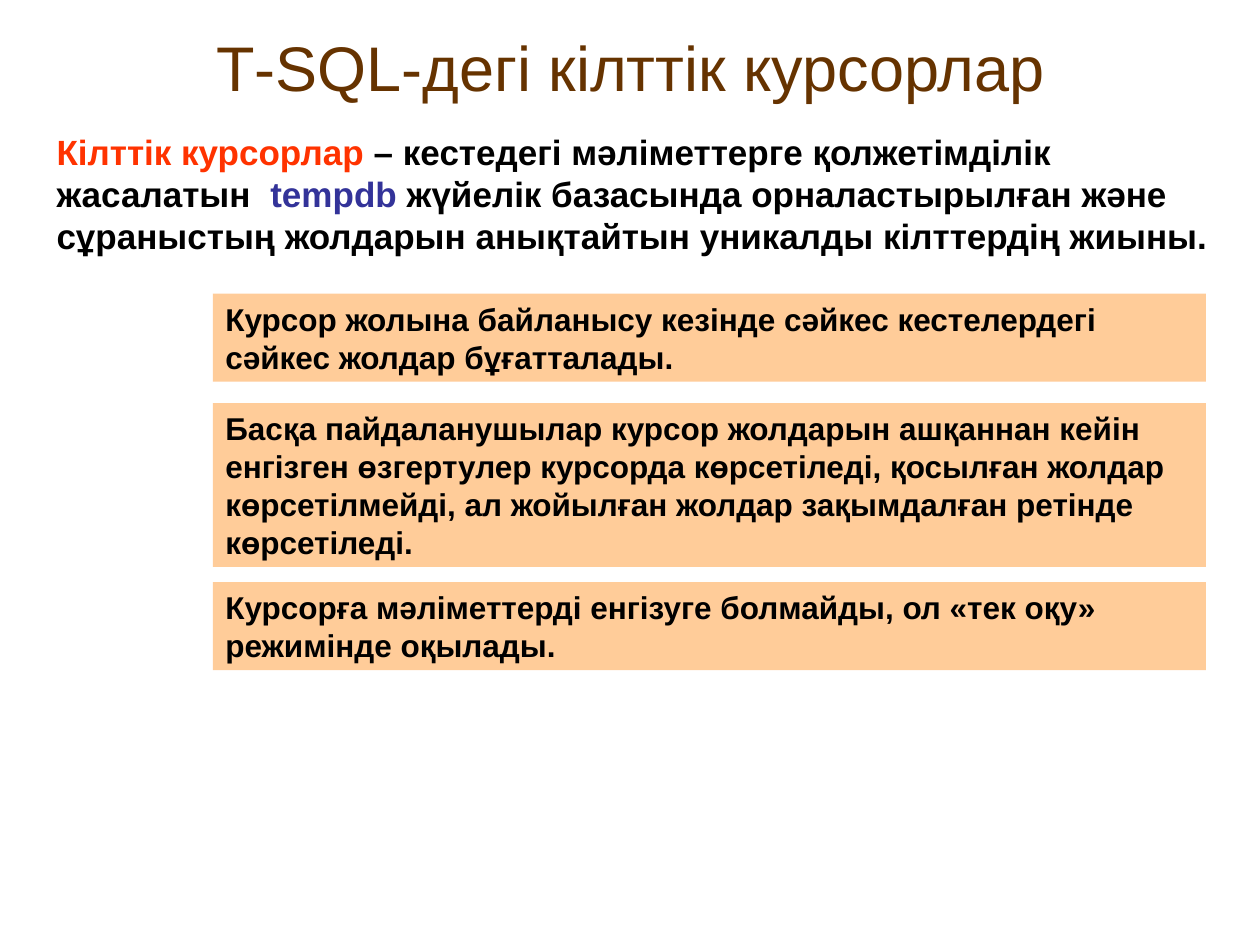
import pptx
import pptx.dml.color
import pptx.enum.shapes
import pptx.enum.text
import pptx.util

Inches = pptx.util.Inches
RGBColor = pptx.dml.color.RGBColor
ALIGN = pptx.enum.text.PP_ALIGN
ANCHOR = pptx.enum.text.MSO_ANCHOR

BROWN = RGBColor(0x66, 0x33, 0x00)
RED = RGBColor(0xFF, 0x33, 0x00)
BLUE = RGBColor(0x33, 0x33, 0x99)
BLACK = RGBColor(0x00, 0x00, 0x00)
PEACH = RGBColor(0xFF, 0xCC, 0x99)

TITLE = [("Т-SQL-дегі кілттік курсорлар", BROWN)]
DEFINITION = [
    ("Кілттік курсорлар ", RED),
    ("– кестедегі мәліметтерге қолжетімділік жасалатын  ", BLACK),
    ("tempdb ", BLUE),
    ("жүйелік базасында орналастырылған және сұраныстың жолдарын "
     "анықтайтын уникалды кілттердің жиыны.", BLACK),
]
# top, height, text
PROPERTIES = [
    (2.33, 0.7, "Курсор жолына байланысу кезінде сәйкес кестелердегі "
                "сәйкес жолдар бұғатталады."),
    (3.2, 1.3, "Басқа пайдаланушылар курсор жолдарын ашқаннан кейін "
               "енгізген өзгертулер курсорда көрсетіледі, қосылған жолдар "
               "көрсетілмейді, ал жойылған жолдар зақымдалған ретінде көрсетіледі."),
    (4.62, 0.7, "Курсорға мәліметтерді енгізуге болмайды, ол «тек оқу» "
                "режимінде оқылады."),
]
PROPERTY_LEFT, PROPERTY_WIDTH = 1.69, 7.88


def write_text(shape, runs, size, bold=True, align=ALIGN.LEFT, anchor=ANCHOR.TOP):
    frame = shape.text_frame
    frame.word_wrap = True
    frame.vertical_anchor = anchor
    paragraph = frame.paragraphs[0]
    paragraph.alignment = align
    font_format = {"name": "Arial", "size": pptx.util.Pt(size), "bold": bold}
    for text, color in runs:
        run = paragraph.add_run()
        run.text = text
        for name, value in font_format.items():
            setattr(run.font, name, value)
        run.font.color.rgb = color


def add_text(slide, box, runs, size, **options):
    shape = slide.shapes.add_textbox(*map(Inches, box))
    write_text(shape, runs, size, **options)


def add_property(slide, top, height, text):
    box = (PROPERTY_LEFT, top, PROPERTY_WIDTH, height)
    shape = slide.shapes.add_shape(
        pptx.enum.shapes.MSO_SHAPE.RECTANGLE, *map(Inches, box))
    shape.shadow.inherit = False
    shape.fill.solid()
    shape.fill.fore_color.rgb = PEACH
    shape.line.fill.background()
    write_text(shape, [(text, BLACK)], 18)


def main():
    presentation = pptx.Presentation()
    presentation.slide_width = Inches(10)
    presentation.slide_height = Inches(7.5)
    slide = presentation.slides.add_slide(presentation.slide_layouts[6])
    add_text(slide, (0.2, 0.3, 9.61, 0.46), TITLE, 36,
             bold=False, align=ALIGN.CENTER, anchor=ANCHOR.MIDDLE)
    add_text(slide, (0.35, 0.99, 9.45, 1.1), DEFINITION, 20)
    for top, height, text in PROPERTIES:
        add_property(slide, top, height, text)
    presentation.save("out.pptx")


if __name__ == "__main__":
    main()
